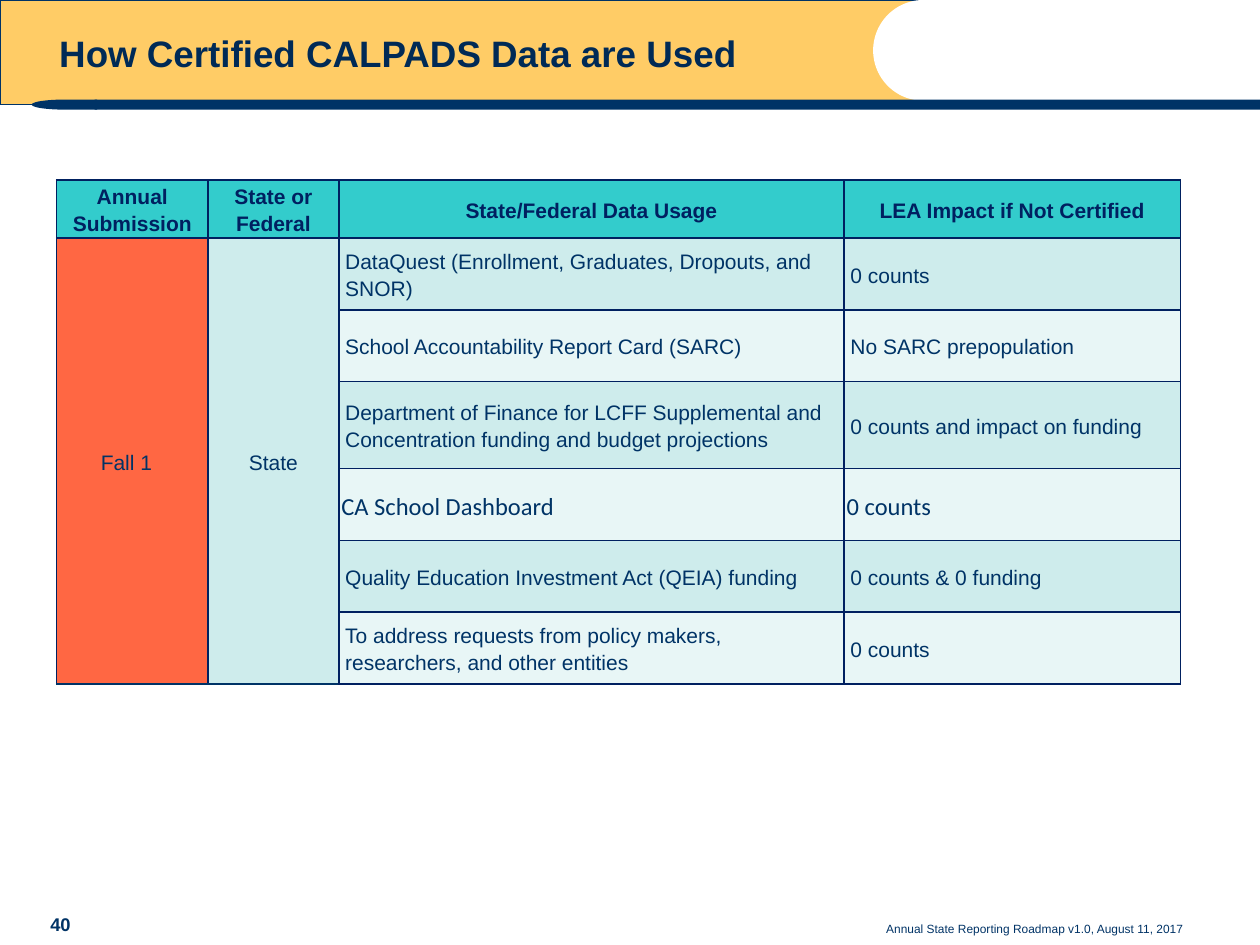
"""Build the slide on how certified CALPADS data are used."""
import pptx
import pptx.dml.color
import pptx.enum.shapes
import pptx.enum.text
import pptx.oxml
import pptx.oxml.ns
import pptx.util

Inches, Pt = pptx.util.Inches, pptx.util.Pt
RGBColor = pptx.dml.color.RGBColor
SHAPE = pptx.enum.shapes.MSO_SHAPE
ALIGN = pptx.enum.text.PP_ALIGN
ANCHOR = pptx.enum.text.MSO_ANCHOR

GOLD = RGBColor(0xFF, 0xCC, 0x66)
WHITE = RGBColor(0xFF, 0xFF, 0xFF)
NAVY = RGBColor(0x00, 0x33, 0x66)
TITLE_NAVY = RGBColor(0x00, 0x2A, 0x56)
BORDER_NAVY = RGBColor(0x00, 0x20, 0x60)
TURQUOISE = RGBColor(0x33, 0xCC, 0xCC)
ORANGE = RGBColor(0xFF, 0x67, 0x43)
AQUA = RGBColor(0xCE, 0xEC, 0xEC)
PALE_AQUA = RGBColor(0xE8, 0xF6, 0xF6)


def style_paragraph(paragraph, size, color, bold=False, align=ALIGN.LEFT, font="Arial"):
    paragraph.alignment = align
    paragraph.font.name = font
    paragraph.font.size = Pt(size)
    paragraph.font.bold = bold
    paragraph.font.color.rgb = color


def style_cell(cell, fill, bottom=BORDER_NAVY, margins=(0.05, 0)):
    cell.vertical_anchor = ANCHOR.MIDDLE
    cell.margin_left = cell.margin_right = Inches(margins[0])
    cell.margin_top = cell.margin_bottom = Inches(margins[1])
    properties = cell._tc.get_or_add_tcPr()
    for side in "LRTB":
        color = bottom if side == "B" else BORDER_NAVY
        properties.append(pptx.oxml.parse_xml(
            f'<a:ln{side} {pptx.oxml.ns.nsdecls("a")} w="{Pt(1)}"><a:solidFill>'
            f'<a:srgbClr val="{color}"/></a:solidFill></a:ln{side}>'))
    cell.fill.solid()
    cell.fill.fore_color.rgb = fill


presentation = pptx.Presentation()
presentation.slide_width, presentation.slide_height = Inches(10), Inches(7.5)
slide = presentation.slides.add_slide(presentation.slide_layouts[5])

for preset, box, fill, outline in [
    (SHAPE.RECTANGLE, (0, 0, 7.33, 0.83), GOLD, NAVY),
    (SHAPE.OVAL, (6.93, 0, 0.8, 0.8), WHITE, None),
    (SHAPE.RECTANGLE, (7.33, 0, 2.67, 0.79), WHITE, None),
    (SHAPE.RECTANGLE, (0.75, 0.79, 9.25, 0.08), NAVY, None),
    (SHAPE.FLOWCHART_DELAY, (0.25, 0.79, 0.52, 0.08), NAVY, None),
]:
    banner = slide.shapes.add_shape(preset, *map(Inches, box))
    banner.shadow.inherit = False
    banner.fill.solid()
    banner.fill.fore_color.rgb = fill
    if outline:
        banner.line.color.rgb = outline
        banner.line.width = Pt(0.75)
    else:
        banner.line.fill.background()
    if preset == SHAPE.FLOWCHART_DELAY:
        banner.rotation = 180

title = slide.shapes.title
title.left, title.top, title.width, title.height = map(Inches, (0.37, 0.19, 6, 0.58))
slide.shapes._spTree.append(title._element)
title.text_frame.text = "How Certified CALPADS Data are Used"
title.text_frame.vertical_anchor = ANCHOR.TOP
title.text_frame.margin_top = Inches(0.09)
title.text_frame.paragraphs[0].line_spacing = 0.9
style_paragraph(title.text_frame.paragraphs[0], 21, TITLE_NAVY, True)

headers = ["Annual Submission", "State or Federal", "State/Federal Data Usage",
           "LEA Impact if Not Certified"]
usages = [
    ("DataQuest (Enrollment, Graduates, Dropouts, and SNOR)", "0 counts"),
    ("School Accountability Report Card (SARC)", "No SARC prepopulation"),
    ("Department of Finance for LCFF Supplemental and Concentration funding "
     "and budget projections", "0 counts and impact on funding"),
    ("CA School Dashboard", "0 counts"),
    ("Quality Education Investment Act (QEIA) funding", "0 counts & 0 funding"),
    ("To address requests from policy makers, researchers, and other entities", "0 counts"),
]
DASHBOARD_ROW = 4

table = slide.shapes.add_table(
    len(usages) + 1, len(headers), *map(Inches, (0.45, 1.43, 8.92, 4))).table
table.horz_banding = False
for column, width in zip(table.columns, (1.2, 1.04, 4.01, 2.67)):
    column.width = Inches(width)
for row, height in zip(table.rows, (0.46, 0.57, 0.57, 0.69, 0.57, 0.57, 0.57)):
    row.height = Inches(height)

for column, header in enumerate(headers):
    cell = table.cell(0, column)
    style_cell(cell, TURQUOISE)
    cell.text = header
    cell.text_frame.paragraphs[0].line_spacing = 1.15
    style_paragraph(cell.text_frame.paragraphs[0], 12, BORDER_NAVY, True, ALIGN.CENTER)

for column, (label, fill) in enumerate([("Fall 1", ORANGE), ("State", AQUA)]):
    for row in range(1, len(usages) + 1):
        style_cell(table.cell(row, column), fill, NAVY)
    cell = table.cell(1, column)
    cell.merge(table.cell(len(usages), column))
    cell.text = label
    style_paragraph(cell.text_frame.paragraphs[0], 12, NAVY, align=ALIGN.CENTER)

trailing_tab = table.cell(1, 0).text_frame.paragraphs[0].add_run()
trailing_tab.text = "\t"
trailing_tab.font.size = Pt(16)
trailing_tab.font.color.rgb = WHITE
table.cell(1, 1).text_frame.paragraphs[0].line_spacing = 1.15

for row, usage in enumerate(usages, 1):
    is_dashboard = row == DASHBOARD_ROW
    for column, text in enumerate(usage, 2):
        cell = table.cell(row, column)
        style_cell(cell, AQUA if row % 2 else PALE_AQUA,
                   margins=(0.02, 0.02) if is_dashboard else (0.05, 0))
        cell.text = text
        cell.text_frame.paragraphs[0].line_spacing = 1.15
        style_paragraph(cell.text_frame.paragraphs[0], 14 if is_dashboard else 12, NAVY,
                        font="Calibri" if is_dashboard else "Arial")

for text, box, size, bold, align in [
    ("Annual State Reporting Roadmap v1.0, August 11, 2017",
     (4.17, 7.08, 5.32, 0.4), 6.8, False, ALIGN.RIGHT),
    ("40", (0.16, 7.1, 0.64, 0.37), 10.5, True, ALIGN.CENTER),
]:
    footer = slide.shapes.add_textbox(*map(Inches, box)).text_frame
    footer.word_wrap = True
    footer.vertical_anchor = ANCHOR.BOTTOM
    footer.text = text
    style_paragraph(footer.paragraphs[0], size, NAVY, bold, align)

presentation.save("out.pptx")
